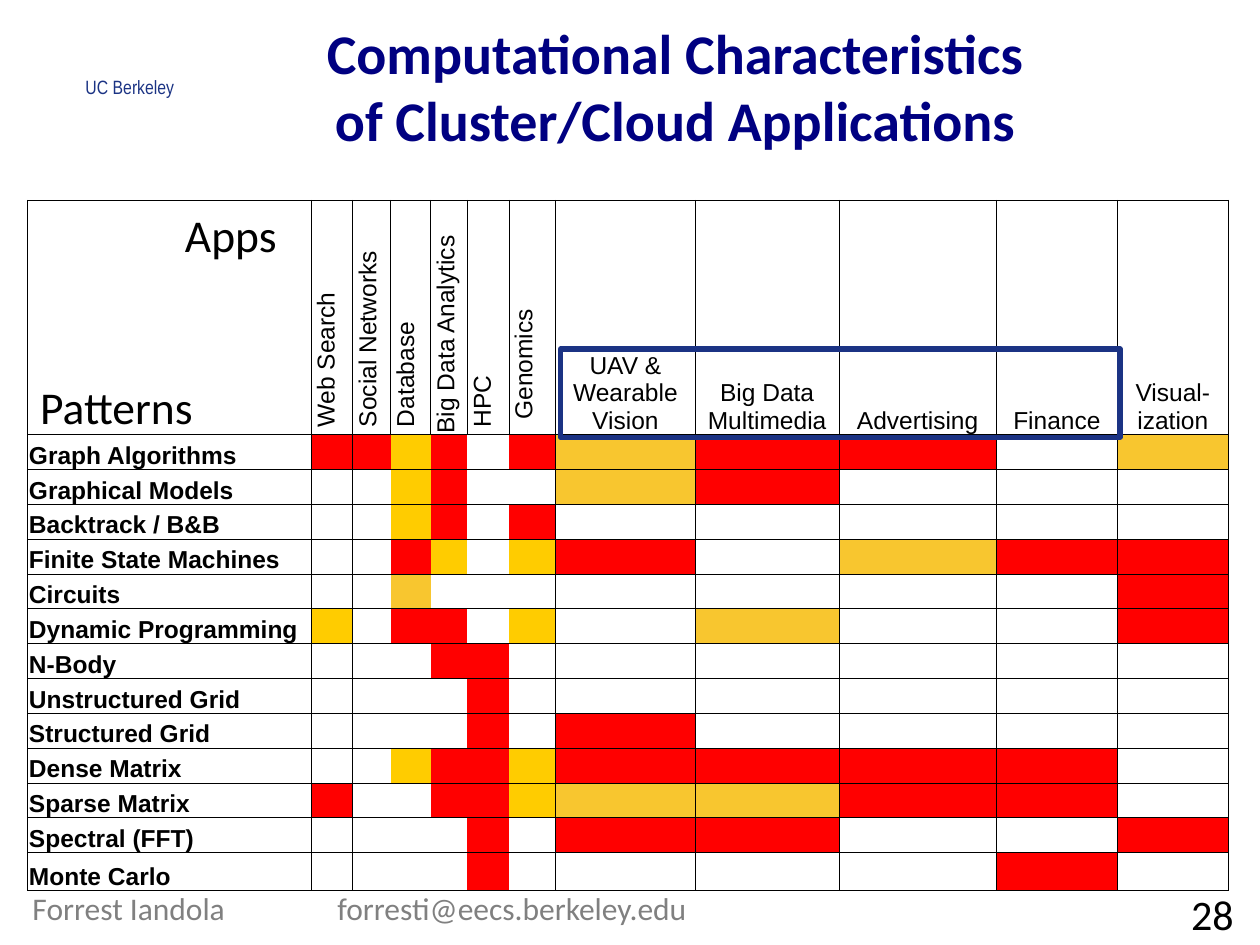
from pptx import Presentation
from pptx.dml.color import RGBColor
from pptx.enum.shapes import MSO_SHAPE
from pptx.enum.text import MSO_ANCHOR, PP_ALIGN
from pptx.oxml.ns import qn
from pptx.util import Inches, Pt
from lxml.etree import SubElement


def color(value):
    return RGBColor.from_string(value)


def style_paragraph(paragraph, size, name, hex_color, bold=False, align=PP_ALIGN.LEFT):
    paragraph.alignment = align
    for run in paragraph.runs:
        for key, value in {"size": Pt(size), "name": name, "bold": bold}.items():
            setattr(run.font, key, value)
        run.font.color.rgb = color(hex_color)


presentation = Presentation()
presentation.slide_width = Inches(10)
presentation.slide_height = Inches(7.5)
slide = presentation.slides.add_slide(presentation.slide_layouts[5])

title = slide.shapes.title
title_format = {"left": 1.47, "top": 0.06, "width": 7.78, "height": 1.24}
for key, value in title_format.items():
    setattr(title, key, Inches(value))
title.text_frame.text = "Computational Characteristics\vof Cluster/Cloud Applications"
title.text_frame.vertical_anchor = MSO_ANCHOR.MIDDLE
style_paragraph(title.text_frame.paragraphs[0], 32, "Calibri", "000081", True, PP_ALIGN.CENTER)

column_widths = [2.25, 0.33, 0.3, 0.32, 0.29, 0.33, 0.37, 1.11, 1.14, 1.25, 0.96, 0.88]
headers = ["", "Web Search", "Social Networks", "Database", "Big Data Analytics", "HPC",
           "Genomics", "UAV & Wearable\vVision", "Big Data Multimedia", "Advertising",
           "Finance", "Visual-\vization"]
header_indents = [0, 0.05, 0.05, 0.05, 0, 0.05, 0.11, 0, 0, 0, 0, 0]
patterns = [
    ("Graph Algorithms", "RRYR.RORR.O"),
    ("Graphical Models", "..YR..OR..."),
    ("Backtrack / B&B", "..YR.R....."),
    ("Finite State Machines", "..RY.YR.ORR"),
    ("Circuits", "..O.......R"),
    ("Dynamic Programming", "Y.RR.Y.O..R"),
    ("N-Body", "...RR......"),
    ("Unstructured Grid", "....R......"),
    ("Structured Grid", "....R.R...."),
    ("Dense Matrix", "..YRRYRRRR."),
    ("Sparse Matrix", "R..RRYOORR."),
    ("Spectral (FFT)", "....R.RR..R"),
    ("Monte Carlo", "....R....R."),
]
heat_colors = {"R": "FF0000", "Y": "FFCC00", "O": "F8C62F", ".": "FFFFFF"}
first_wide = 7
last_column = len(headers) - 1
table_height, header_height, last_height = 5.48, 1.86, 0.3
row_height = (table_height - header_height - last_height) / (len(patterns) - 1)
row_heights = [header_height] + [row_height] * (len(patterns) - 1) + [last_height]

table = slide.shapes.add_table(
    len(row_heights), len(headers), Inches(0.22), Inches(1.59),
    Inches(sum(column_widths)), Inches(table_height)).table
table.first_row = False
table.horz_banding = False
table._tbl.tblPr.find(qn("a:tableStyleId")).text = "{2D5ABB26-0587-4C30-8999-92F81FD0307C}"
for column, width in zip(table.columns, column_widths):
    column.width = Inches(width)
for row, height in zip(table.rows, row_heights):
    row.height = Inches(height)

cell_format = {"margin_left": Inches(0.01), "margin_right": Inches(0.01),
               "margin_top": Inches(0.01), "margin_bottom": 0,
               "vertical_anchor": MSO_ANCHOR.BOTTOM}
rows = [(headers, "." * len(headers))]
rows += [([name] + [""] * last_column, "." + heat) for name, heat in patterns]
for row_index, (texts, heat) in enumerate(rows):
    for column_index, text in enumerate(texts):
        cell = table.cell(row_index, column_index)
        is_header = row_index == 0
        is_rotated = is_header and 0 < column_index < first_wide
        for key, value in cell_format.items():
            setattr(cell, key, value)
        cell.text = text
        paragraph = cell.text_frame.paragraphs[0]
        centered = is_header and column_index >= first_wide
        style_paragraph(paragraph, 14, "Arial", "000000", not is_header,
                        PP_ALIGN.CENTER if centered else PP_ALIGN.LEFT)
        if not text:
            paragraph._p.get_or_add_endParaRPr().set("sz", "1400")
        properties = cell._tc.get_or_add_tcPr()
        if is_rotated:
            properties.set("vert", "vert270")
            paragraph._p.get_or_add_pPr().set("marL", str(Inches(header_indents[column_index])))

        inner = not is_header and 0 < column_index < first_wide
        borders = {
            "lnL": 0 if inner and column_index > 1 else 0.5,
            "lnR": 0 if inner and column_index < first_wide - 1 else 0.5,
            "lnT": 0.5,
            "lnB": 0.5,
        }
        if column_index == last_column:
            borders["lnR"] = 1
        for side, width in borders.items():
            if width:
                line = SubElement(properties, qn(f"a:{side}"), w=str(Pt(width)))
                fill = SubElement(line, qn("a:solidFill"))
                SubElement(fill, qn("a:srgbClr"), val="000000")
        cell.fill.solid()
        cell.fill.fore_color.rgb = color(heat_colors[heat[column_index]])

labels = [
    ("UC Berkeley", 0.58, 0.55, 0.92, 0.29, 11, "Arial Narrow", "1B3384", PP_ALIGN.LEFT, False),
    ("28", 8.43, 7, 1.46, 0.5, 24, "Calibri", "000000", PP_ALIGN.RIGHT, True),
    ("Apps", 1.37, 1.59, 0.94, 0.74, 26, "Calibri", "000000", PP_ALIGN.LEFT, True),
    ("Patterns", 0.22, 2.96, 1.47, 0.41, 26, "Calibri", "000000", PP_ALIGN.LEFT, True),
    ("Forrest Iandola\tforresti@eecs.berkeley.edu", 0.16, 7.01, 6.53, 0.4, 18, "Calibri",
     "808080", PP_ALIGN.LEFT, True),
]
for text, left, top, width, height, size, name, hex_color, align, wrap in labels:
    box = slide.shapes.add_textbox(Inches(left), Inches(top), Inches(width), Inches(height))
    box.text_frame.word_wrap = wrap
    paragraph = box.text_frame.paragraphs[0]
    if "\t" in text:
        tab_list = SubElement(paragraph._p.get_or_add_pPr(), qn("a:tabLst"))
        SubElement(tab_list, qn("a:tab"), pos=str(Inches(2.42)), algn="l")
    paragraph.add_run().text = text
    style_paragraph(paragraph, size, name, hex_color, align=align)

highlight = slide.shapes.add_shape(
    MSO_SHAPE.RECTANGLE, Inches(4.45), Inches(2.77), Inches(4.44), Inches(0.7))
highlight.shadow.inherit = False
highlight.fill.background()
highlight.line.color.rgb = color("1B3384")
highlight.line.width = Pt(3)

presentation.save("out.pptx")
